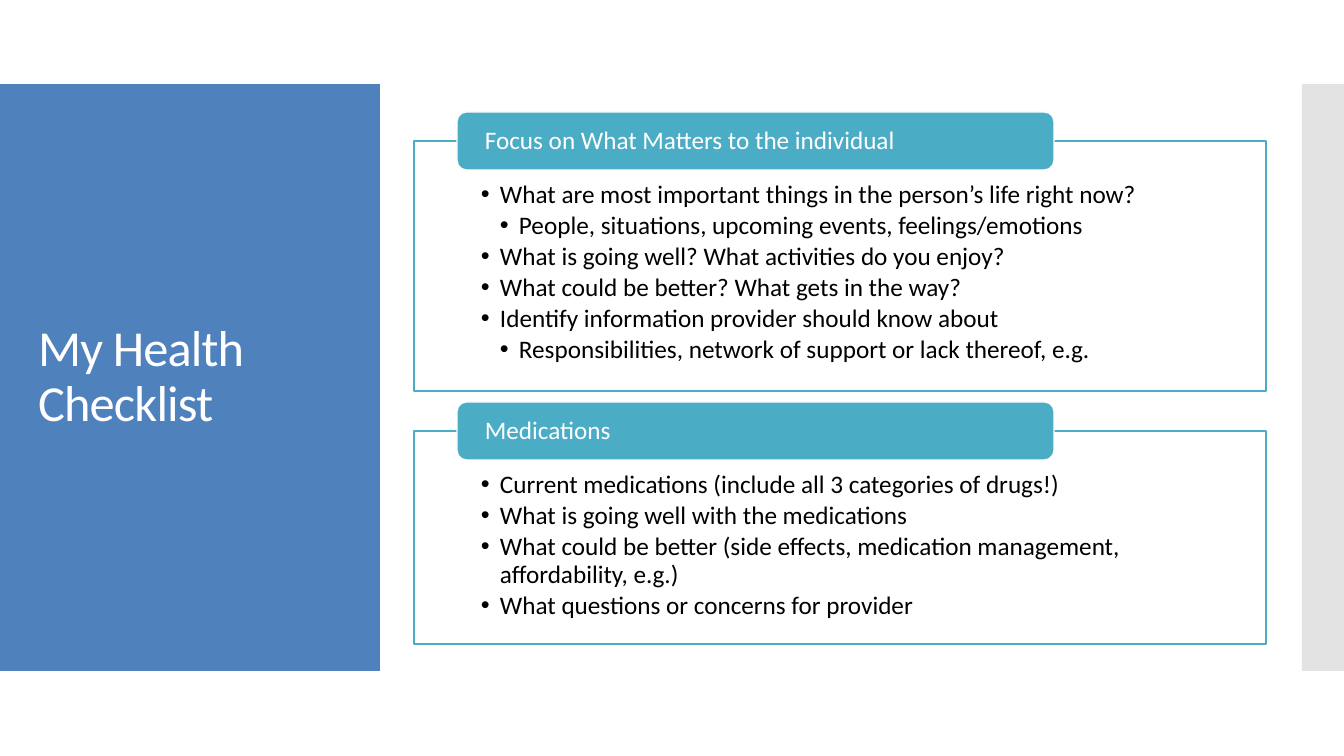
from lxml import etree
from pptx import Presentation
from pptx.dml.color import RGBColor
from pptx.enum.shapes import MSO_SHAPE
from pptx.enum.text import MSO_ANCHOR, MSO_AUTO_SIZE, PP_ALIGN
from pptx.oxml.ns import qn
from pptx.util import Emu, Pt

RECT = MSO_SHAPE.RECTANGLE
ROUNDED = MSO_SHAPE.ROUNDED_RECTANGLE
TOP, MIDDLE = MSO_ANCHOR.TOP, MSO_ANCHOR.MIDDLE
LEFT = PP_ALIGN.LEFT
NO_AUTOFIT = MSO_AUTO_SIZE.NONE

WHITE = RGBColor(0xFF, 0xFF, 0xFF)
BLACK = RGBColor(0x00, 0x00, 0x00)
BLUE = RGBColor(0x4F, 0x81, 0xBD)
TEAL = RGBColor(0x4B, 0xAC, 0xC6)
GREY = RGBColor(0xC8, 0xC8, 0xC8)

FONT = "Calibri"
SLIDE_W, SLIDE_H = 1344, 756
PANEL_TOP, PANEL_H = 84, 587
CARD_X, CARD_W = 414, 852
TAB_X, TAB_W, TAB_H = 457, 597, 58
INDENT = 19

CARDS = [
    (141, 250, "Focus on What Matters to the individual", [
        (1, "What are most important things in the person’s life right now?"),
        (2, "People, situations, upcoming events, feelings/emotions"),
        (1, "What is going well? What activities do you enjoy?"),
        (1, "What could be better? What gets in the way?"),
        (1, "Identify information provider should know about"),
        (2, "Responsibilities, network of support or lack thereof, e.g."),
    ]),
    (431, 213, "Medications", [
        (1, "Current medications (include all 3 categories of drugs!)"),
        (1, "What is going well with the medications"),
        (1, "What could be better (side effects, medication management, "
            "affordability, e.g.)"),
        (1, "What questions or concerns for provider"),
    ]),
]


def px(n):
    return Emu(round(n * 12192000 / SLIDE_W))


def add_box(slide, kind, x, y, w, h, fill, line=None, opacity=100):
    sp = slide.shapes.add_shape(kind, px(x), px(y), px(w), px(h))
    sp.shadow.inherit = False
    sp.fill.solid()
    sp.fill.fore_color.rgb = fill
    if opacity < 100:
        color = sp.fill._xPr.find(qn("a:solidFill"))[0]
        etree.SubElement(color, qn("a:alpha"), val=str(opacity * 1000))
    if line is None:
        sp.line.fill.background()
    else:
        sp.line.color.rgb = line
        sp.line.width = Pt(0.85)
    return sp


def set_frame(tf, anchor, left, top, right, bottom):
    tf.word_wrap = True
    tf.auto_size = NO_AUTOFIT
    tf.vertical_anchor = anchor
    tf.margin_left, tf.margin_top = px(left), px(top)
    tf.margin_right, tf.margin_bottom = px(right), px(bottom)


def set_text(p, text, size, color):
    p.text = text
    p.alignment = LEFT
    p.line_spacing = 0.9
    for r in p.runs:
        r.font.name = FONT
        r.font.size = Pt(size)
        r.font.color.rgb = color


def add_bullet(p, level):
    p.level = level
    p.space_after = Pt(2.7)
    pPr = p._p.get_or_add_pPr()
    pPr.set("marL", str(px(INDENT * level)))
    pPr.set("indent", str(-px(INDENT)))
    etree.SubElement(pPr, qn("a:buFont"), typeface="Arial")
    etree.SubElement(pPr, qn("a:buChar"), char="•")


def add_card(slide, y, h, heading, items):
    card = add_box(slide, RECT, CARD_X, y, CARD_W, h, WHITE, TEAL, 90)
    tf = card.text_frame
    set_frame(tf, TOP, 67, 41, 67, 14)
    for i, (level, text) in enumerate(items):
        p = tf.add_paragraph() if i else tf.paragraphs[0]
        set_text(p, text, 18, BLACK)
        add_bullet(p, level)
    tab = add_box(slide, ROUNDED, TAB_X, y - TAB_H // 2, TAB_W, TAB_H, TEAL, WHITE)
    set_frame(tab.text_frame, MIDDLE, 25, 0, 25, 0)
    set_text(tab.text_frame.paragraphs[0], heading, 18, WHITE)


def place_title(slide, text):
    title = slide.shapes.title
    title.left, title.top, title.width, title.height = map(px, (28, 124, 325, 507))
    set_frame(title.text_frame, MIDDLE, 10, 5, 10, 5)
    p = title.text_frame.paragraphs[0]
    set_text(p, text, 36, WHITE)
    p.runs[0].font._element.set("spc", "-60")
    slide.shapes._spTree.append(title._element)


def main():
    prs = Presentation()
    prs.slide_width, prs.slide_height = px(SLIDE_W), px(SLIDE_H)
    slide = prs.slides.add_slide(prs.slide_layouts[5])
    add_box(slide, RECT, 0, PANEL_TOP, 380, PANEL_H, BLUE)
    add_box(slide, RECT, 1302, PANEL_TOP, 42, PANEL_H, GREY, opacity=50)
    place_title(slide, "My Health Checklist")
    for card in CARDS:
        add_card(slide, *card)
    prs.save("out.pptx")


if __name__ == "__main__":
    main()
